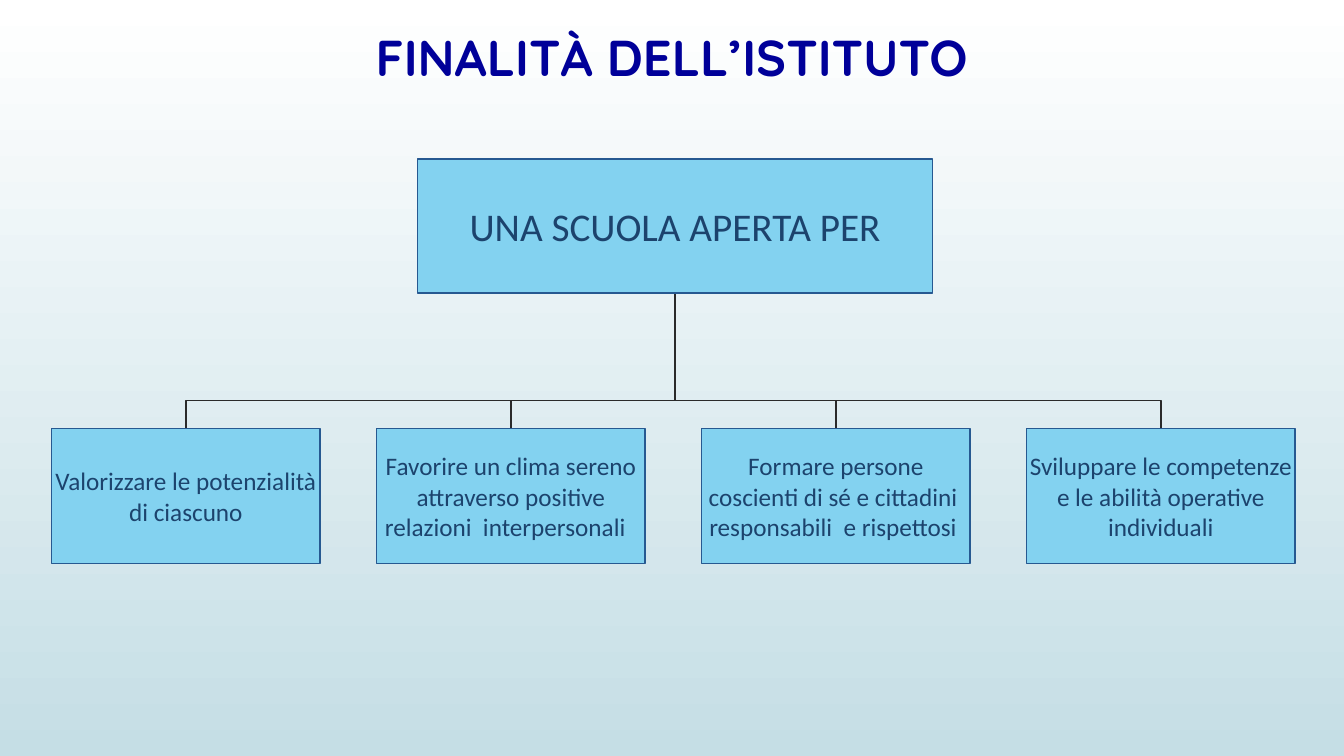
from pptx import Presentation
from pptx.dml.color import RGBColor
from pptx.enum.shapes import MSO_SHAPE
from pptx.enum.text import MSO_ANCHOR, PP_ALIGN
from pptx.util import Cm, Pt

TITLE = "FINALITÀ DELL’ISTITUTO"
SCHOOL = "UNA SCUOLA APERTA PER"
AIMS = [
    "Valorizzare le potenzialità di ciascuno",
    "Favorire un clima sereno attraverso positive relazioni  interpersonali \t",
    "Formare persone coscienti di sé e cittadini  responsabili  e rispettosi ",
    "Sviluppare le competenze e le abilità operative individuali",
]

WHITE = RGBColor(0xFF, 0xFF, 0xFF)
PALE_TEAL = RGBColor(0xC5, 0xDE, 0xE5)
NAVY = RGBColor(0x00, 0x00, 0x99)
SKY = RGBColor(0x83, 0xD2, 0xF0)
BORDER = RGBColor(0x26, 0x59, 0x91)
INK = RGBColor(0x1C, 0x43, 0x6D)
CHARCOAL = RGBColor(0x2A, 0x2A, 0x2A)

LINE_WIDTH = Pt(1.25)
SCHOOL_LEFT, SCHOOL_TOP = Cm(10.52), Cm(4.01)
SCHOOL_WIDTH, SCHOOL_HEIGHT = Cm(12.98), Cm(3.38)
AIM_LEFT, AIM_TOP, AIM_PITCH = Cm(1.3), Cm(10.8), Cm(8.19)
AIM_WIDTH, AIM_HEIGHT = Cm(6.77), Cm(3.4)
BRANCH_Y = Cm(10.09)


def write(shape, text, font_name, size, color, bold=False):
    frame = shape.text_frame
    frame.word_wrap = True
    paragraph = frame.paragraphs[0]
    paragraph.text = text
    paragraph.alignment = PP_ALIGN.CENTER
    font = paragraph.font
    font.name, font.size, font.bold = font_name, Pt(size), bold
    font.color.rgb = color
    return frame


def add_box(slide, text, left, top, width, height, size, inset):
    box = slide.shapes.add_shape(MSO_SHAPE.RECTANGLE, left, top, width, height)
    box.shadow.inherit = False
    box.fill.solid()
    box.fill.fore_color.rgb = SKY
    box.line.color.rgb = BORDER
    box.line.width = LINE_WIDTH
    frame = write(box, text, "Calibri", size, INK)
    frame.vertical_anchor = MSO_ANCHOR.MIDDLE
    frame.margin_left = frame.margin_right = inset
    frame.margin_top = frame.margin_bottom = inset


def add_branch(slide, start_x, end_x):
    """Draw the elbow line from the school box down to one aim."""
    builder = slide.shapes.build_freeform(start_x, SCHOOL_TOP + SCHOOL_HEIGHT)
    builder.add_line_segments(
        [(start_x, BRANCH_Y), (end_x, BRANCH_Y), (end_x, AIM_TOP)], close=False
    )
    branch = builder.convert_to_shape()
    branch.shadow.inherit = False
    branch.fill.background()
    branch.line.color.rgb = CHARCOAL
    branch.line.width = LINE_WIDTH


def main():
    prs = Presentation()
    prs.slide_width, prs.slide_height = Cm(33.87), Cm(19.05)
    slide = prs.slides.add_slide(prs.slide_layouts[6])

    backdrop = slide.background.fill
    backdrop.gradient()
    backdrop.gradient_angle = 270
    for stop, color in zip(backdrop.gradient_stops, (WHITE, PALE_TEAL)):
        stop.color.rgb = color

    title = slide.shapes.add_textbox(Cm(0.91), Cm(0.53), Cm(32.03), Cm(2.31))
    write(title, TITLE, "Quicksand", 36, NAVY, bold=True)

    aim_lefts = [AIM_LEFT + i * AIM_PITCH for i in range(len(AIMS))]
    for left in aim_lefts:
        add_branch(slide, SCHOOL_LEFT + SCHOOL_WIDTH // 2, left + AIM_WIDTH // 2)

    add_box(slide, SCHOOL, SCHOOL_LEFT, SCHOOL_TOP, SCHOOL_WIDTH, SCHOOL_HEIGHT,
            28, Cm(0.05))
    for aim, left in zip(AIMS, aim_lefts):
        add_box(slide, aim, left, AIM_TOP, AIM_WIDTH, AIM_HEIGHT, 18, Cm(0.03))

    prs.save("out.pptx")


if __name__ == "__main__":
    main()
